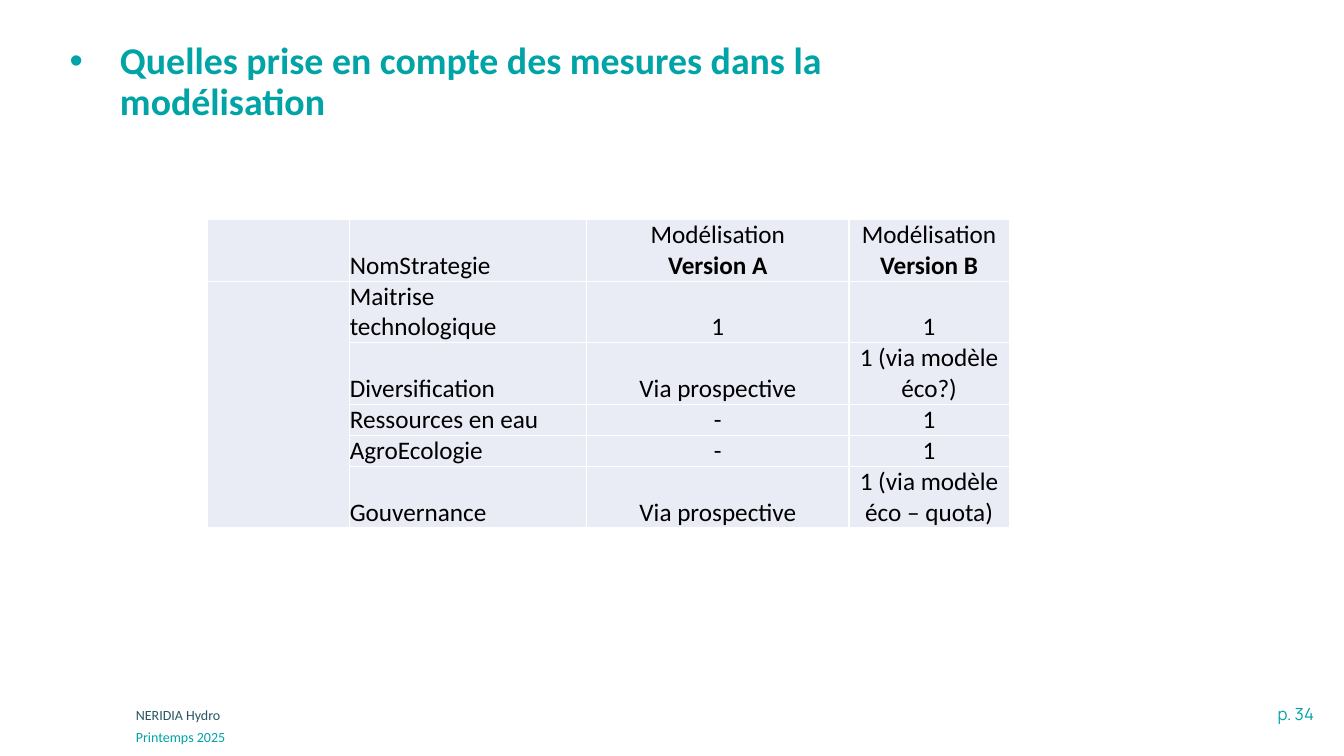
from lxml import etree
from pptx import Presentation
from pptx import util as u
from pptx.dml.color import RGBColor
from pptx.enum import text
from pptx.oxml.ns import qn

TEAL = RGBColor(0x00, 0xA3, 0xA6)
DARK_TEAL = RGBColor(0x27, 0x56, 0x62)
BLACK = RGBColor(0x00, 0x00, 0x00)
WHITE = RGBColor(0xFF, 0xFF, 0xFF)
PALE_BLUE = RGBColor(0xE9, 0xEB, 0xF5)

LEFT, CENTER, RIGHT = text.PP_ALIGN.LEFT, text.PP_ALIGN.CENTER, text.PP_ALIGN.RIGHT
COLUMN_WIDTHS = [1.41, 2.35, 2.6, 1.59]
ROW_HEIGHTS = [0.61, 0.61, 0.61, 0.31, 0.31, 0.61]
HEADINGS = ["NomStrategie", "Modélisation\nVersion A", "Modélisation\nVersion B"]
STRATEGIES = [
    ["Maitrise technologique", "1", "1"],
    ["Diversification", "Via prospective", "1 (via modèle éco?)"],
    ["Ressources en eau", "-", "1"],
    ["AgroEcologie", "-", "1"],
    ["Gouvernance", "Via prospective", "1 (via modèle éco – quota)"],
]


def add_span(para, words, size, color, bold=False, font="Calibri"):
    span = para.add_run()
    span.text = words
    span.font.name = font
    span.font.size = u.Pt(size)
    span.font.bold = bold
    span.font.color.rgb = color


def add_box(page, left, top, width, height):
    box = page.shapes.add_textbox(*map(u.Inches, (left, top, width, height)))
    box.text_frame.word_wrap = True
    return box.text_frame


def add_title(page, left, top, width, height):
    frame = add_box(page, left, top, width, height)
    frame.margin_left = 0
    frame.vertical_anchor = text.MSO_ANCHOR.MIDDLE
    para = frame.paragraphs[0]
    para.line_spacing = 0.9
    properties = para._p.get_or_add_pPr()
    properties.set("marL", str(u.Inches(0.5)))
    properties.set("indent", str(u.Inches(-0.5)))
    etree.SubElement(properties, qn("a:buFont")).set("typeface", "Arial")
    etree.SubElement(properties, qn("a:buChar")).set("char", "•")
    add_span(para, "Quelles prise en compte des mesures dans la modélisation", 27, TEAL, True)


def add_cell_borders(cell):
    properties = cell._tc.get_or_add_tcPr()
    for position, side in enumerate(("a:lnL", "a:lnR", "a:lnT", "a:lnB")):
        line = etree.Element(qn(side), w=str(u.Pt(1)))
        fill = etree.SubElement(line, qn("a:solidFill"))
        etree.SubElement(fill, qn("a:srgbClr")).set("val", str(WHITE))
        properties.insert(position, line)


def style_cell(cell):
    cell.margin_left = cell.margin_right = cell.margin_top = cell.margin_bottom = 0
    cell.vertical_anchor = text.MSO_ANCHOR.BOTTOM
    cell.fill.solid()
    cell.fill.fore_color.rgb = PALE_BLUE
    add_cell_borders(cell)


def fill_cell(cell, words, align):
    for index, line in enumerate(words.split("\n")):
        para = cell.text_frame.add_paragraph() if index else cell.text_frame.paragraphs[0]
        para.alignment = align
        add_span(para, line, 18, BLACK, bold=index > 0)


def add_strategy_table(page, left, top):
    frame = page.shapes.add_table(
        len(ROW_HEIGHTS), len(COLUMN_WIDTHS), u.Inches(left), u.Inches(top),
        u.Inches(sum(COLUMN_WIDTHS)), u.Inches(sum(ROW_HEIGHTS)))
    table = frame.table
    table.first_row = table.horz_banding = False
    for column, width in zip(table.columns, COLUMN_WIDTHS):
        column.width = u.Inches(width)
    for row, height in zip(table.rows, ROW_HEIGHTS):
        row.height = u.Inches(height)
    for cell in table.iter_cells():
        style_cell(cell)
    for row, words in enumerate([HEADINGS] + STRATEGIES):
        for column, entry in enumerate(words, 1):
            fill_cell(table.cell(row, column), entry, LEFT if column == 1 else CENTER)
    table.cell(1, 0).merge(table.cell(len(STRATEGIES), 0))


def add_footer(page, left, top, width):
    lines = [("NERIDIA Hydro", DARK_TEAL), ("Printemps 2025", TEAL)]
    for index, (words, color) in enumerate(lines):
        frame = add_box(page, left, top + 0.22 * index, width, 0.28)
        add_span(frame.paragraphs[0], words, 10, color)


def add_page_number(page, left, top, width, height):
    para = add_box(page, left, top, width, height).paragraphs[0]
    para.alignment = RIGHT
    add_span(para, "p. 34", 12, TEAL, font="Manrope")


def main():
    deck = Presentation()
    deck.slide_width, deck.slide_height = u.Inches(13.33), u.Inches(7.5)
    page = deck.slides.add_slide(deck.slide_layouts[6])
    add_page_number(page, 10.85, 6.93, 2.28, 0.3)
    add_footer(page, 1.25, 6.96, 7.34)
    add_title(page, 0.69, 0.4, 8.62, 0.84)
    add_strategy_table(page, 2.06, 2.18)
    deck.save("out.pptx")


if __name__ == "__main__":
    main()
